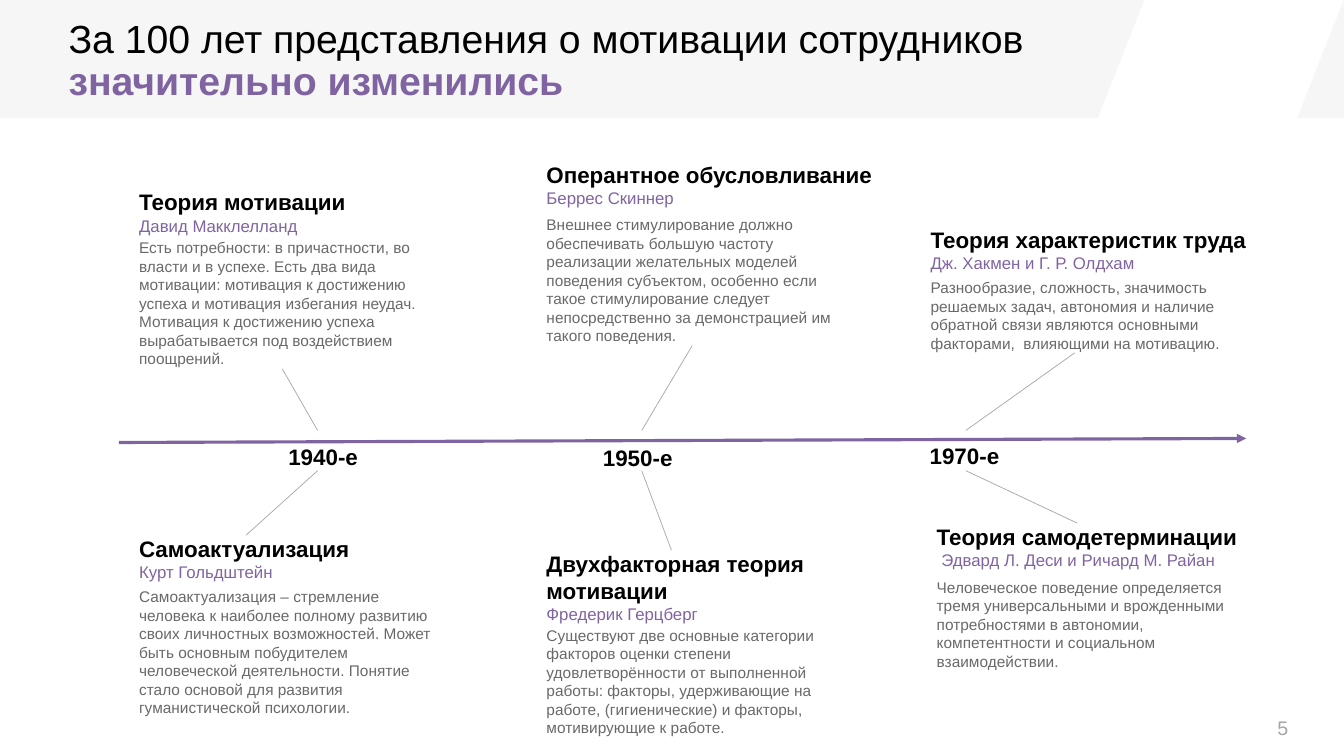
from collections import namedtuple

from lxml import etree
from pptx import Presentation
from pptx import util as u
from pptx.dml.color import RGBColor
from pptx.enum import shapes, text
from pptx.oxml import ns

COLORS = {"band": "F6F6F6", "white": "FFFFFF", "black": "000000", "accent": "8064A2",
          "body": "696969", "spoke": "A6A6A6", "number": "A5A5A5"}
FONT = "Arial"
WIDTH, HEIGHT = 13.33, 7.5
BODY_LINE = 0.185  # height of one line of 11 pt text, inches
INDENT = 0.2

Box = namedtuple("Box", "left top width height")
Theory = namedtuple("Theory", "heading author summary box heading_width heading_height lines")

# Each theory's box spans from the top of its heading to the bottom of its summary.
DECADES = [
    ("1940-е", Box(2.66, 4.4, 1.24, 0.27),
     Theory("Теория мотивации", "Давид Макклелланд",
            "Есть потребности: в причастности, во власти и в успехе. Есть два вида мотивации: "
            "мотивация к достижению успеха и мотивация избегания неудач. Мотивация к достижению "
            "успеха вырабатывается под воздействием поощрений.",
            Box(1.18, 1.87, 3.24, 1.79), 2.84, 0.47, 7),
     Theory("Самоактуализация", "Курт Гольдштейн",
            "Самоактуализация – стремление человека к наиболее полному развитию своих личностных "
            "возможностей. Может быть основным побудителем человеческой деятельности. Понятие "
            "стало основой для развития гуманистической психологии.",
            Box(1.18, 5.31, 3.24, 1.81), 2.52, 0.47, 7)),
    ("1950-е", Box(5.78, 4.41, 1.36, 0.27),
     Theory("Оперантное обусловливание", "Беррес Скиннер",
            "Внешнее стимулирование должно обеспечивать большую частоту реализации желательных "
            "моделей поведения субъектом, особенно если такое стимулирование следует "
            "непосредственно за демонстрацией им такого поведения.",
            Box(5.22, 1.6, 3.29, 1.83), 3.57, 0.47, 7),
     Theory("Двухфакторная теория мотивации", "Фредерик Герцберг",
            "Существуют две основные категории факторов оценки степени удовлетворённости от "
            "выполненной работы: факторы, удерживающие на работе, (гигиенические) и факторы, "
            "мотивирующие к работе.",
            Box(5.22, 5.46, 3.29, 1.86), 2.88, 0.74, 6)),
    ("1970-е", Box(9.02, 4.39, 1.29, 0.27),
     Theory("Теория характеристик труда", "Дж. Хакмен и Г. Р. Олдхам",
            "Разнообразие, сложность, значимость решаемых задач, автономия и наличие обратной "
            "связи являются основными факторами,  влияющими на мотивацию.",
            Box(9.03, 2.24, 3.26, 1.26), 3.33, 0.47, 4),
     Theory("Теория самодетерминации", " Эдвард Л. Деси и Ричард М. Райан",
            "Человеческое поведение определяется тремя универсальными и врожденными "
            "потребностями в автономии, компетентности и социальном взаимодействии.",
            Box(9.09, 5.19, 3.19, 1.47), 3.19, 0.47, 5)),
]


def rgb(name):
    return RGBColor.from_string(COLORS[name])


def inches(*lengths):
    return [u.Inches(length) for length in lengths]


def style(font, size, color, bold=False):
    font.name, font.size, font.bold = FONT, u.Pt(size), bold
    font.color.rgb = rgb(color)


def add_text(slide, box, paragraphs, indent=INDENT):
    """Add a text box; each paragraph is (text, size, color, bold)."""
    shape = slide.shapes.add_textbox(*inches(*box))
    frame = shape.text_frame
    frame.word_wrap = True
    frame.auto_size = text.MSO_AUTO_SIZE.SHAPE_TO_FIT_TEXT
    frame.margin_left = u.Inches(indent)
    frame.margin_top = frame.margin_right = frame.margin_bottom = 0
    for index, (words, *look) in enumerate(paragraphs):
        paragraph = frame.add_paragraph() if index else frame.paragraphs[0]
        paragraph.text = words
        style(paragraph.font, *look)
    return shape


def add_line(slide, start, end, color, weight):
    line = slide.shapes.add_connector(shapes.MSO_CONNECTOR.STRAIGHT, *inches(*start, *end))
    line.line.color.rgb = rgb(color)
    line.line.width = u.Pt(weight)
    etree.SubElement(line.element.spPr, ns.qn("a:effectLst"))
    return line


def add_header(slide, box):
    cut = Box(box.left + box.width - 2.44, box.top, 2.44, box.height)
    for kind, area, color in ((shapes.MSO_SHAPE.RECTANGLE, box, "band"),
                              (shapes.MSO_SHAPE.PARALLELOGRAM, cut, "white")):
        part = slide.shapes.add_shape(kind, *inches(*area))
        part.shadow.inherit = False
        part.fill.solid()
        part.fill.fore_color.rgb = rgb(color)
        part.line.fill.background()
    part.adjustments[0] = 0.394

    title = slide.shapes.title
    title.left, title.top, title.width, title.height = inches(
        box.left + 0.58, box.top + 0.24, 9.72, 0.76)
    title.element.getparent().append(title.element)  # in front of the band
    frame = title.text_frame
    frame.word_wrap = True
    frame.auto_size = text.MSO_AUTO_SIZE.NONE
    frame.vertical_anchor = text.MSO_ANCHOR.MIDDLE
    paragraph = frame.paragraphs[0]
    paragraph.alignment = text.PP_ALIGN.LEFT
    paragraph.line_spacing = 0.9
    for words, color, bold in (
            ("За 100 лет представления о мотивации сотрудников ", "black", False),
            ("значительно изменились", "accent", True)):
        run = paragraph.add_run()
        run.text = words
        style(run.font, 28, color, bold)


def add_theory(slide, theory):
    """Place the heading at the top of the theory's box and the summary at its bottom."""
    box = theory.box
    heading = add_text(slide, Box(box.left, box.top, theory.heading_width, theory.heading_height),
                       [(theory.heading, 16, "black", True),
                        (theory.author, 12, "accent", False)])
    height = theory.lines * BODY_LINE
    summary = add_text(slide, Box(box.left, box.top + box.height - height, box.width, height),
                       [(theory.summary, 11, "body", False)])
    return heading, summary


def add_timeline(slide, box):
    """Draw the axis across the box, with theories above and below each decade."""
    for index, (decade, label_box, above, below) in enumerate(DECADES):
        add_text(slide, label_box, [(decade, 16, "black", True)])
        spoke_x = box.left + 1.97 + index * 3.215
        _, upper_summary = add_theory(slide, above)
        lower_heading, _ = add_theory(slide, below)
        for spoke_y, target, side in ((box.top - 0.08, upper_summary, 2),
                                      (box.top + 0.32, lower_heading, 0)):
            spoke = add_line(slide, (spoke_x, spoke_y), (spoke_x, spoke_y), "spoke", 0.5)
            spoke.end_connect(target, side)

    axis = add_line(slide, (box.left, box.top + box.height), (box.left + box.width, box.top),
                    "accent", 2.25)
    etree.SubElement(axis.line._get_or_add_ln(), ns.qn("a:tailEnd"), type="triangle")


def add_page_number(slide, box):
    number = add_text(slide, box, [("5", 14, "number", False)], indent=0.1)
    number.text_frame.word_wrap = False
    number.text_frame.margin_right = u.Inches(0.1)
    number.text_frame.margin_top = number.text_frame.margin_bottom = u.Inches(0.05)


def main():
    deck = Presentation()
    deck.slide_width, deck.slide_height = inches(WIDTH, HEIGHT)
    slide = deck.slides.add_slide(deck.slide_layouts[5])
    add_header(slide, Box(0, -0.01, WIDTH, 1.18))
    add_timeline(slide, Box(1.18, 4.35, 11.18, 0.04))
    add_page_number(slide, Box(WIDTH - 0.76, HEIGHT - 0.45, 0.32, 0.34))
    deck.save("out.pptx")


if __name__ == "__main__":
    main()
